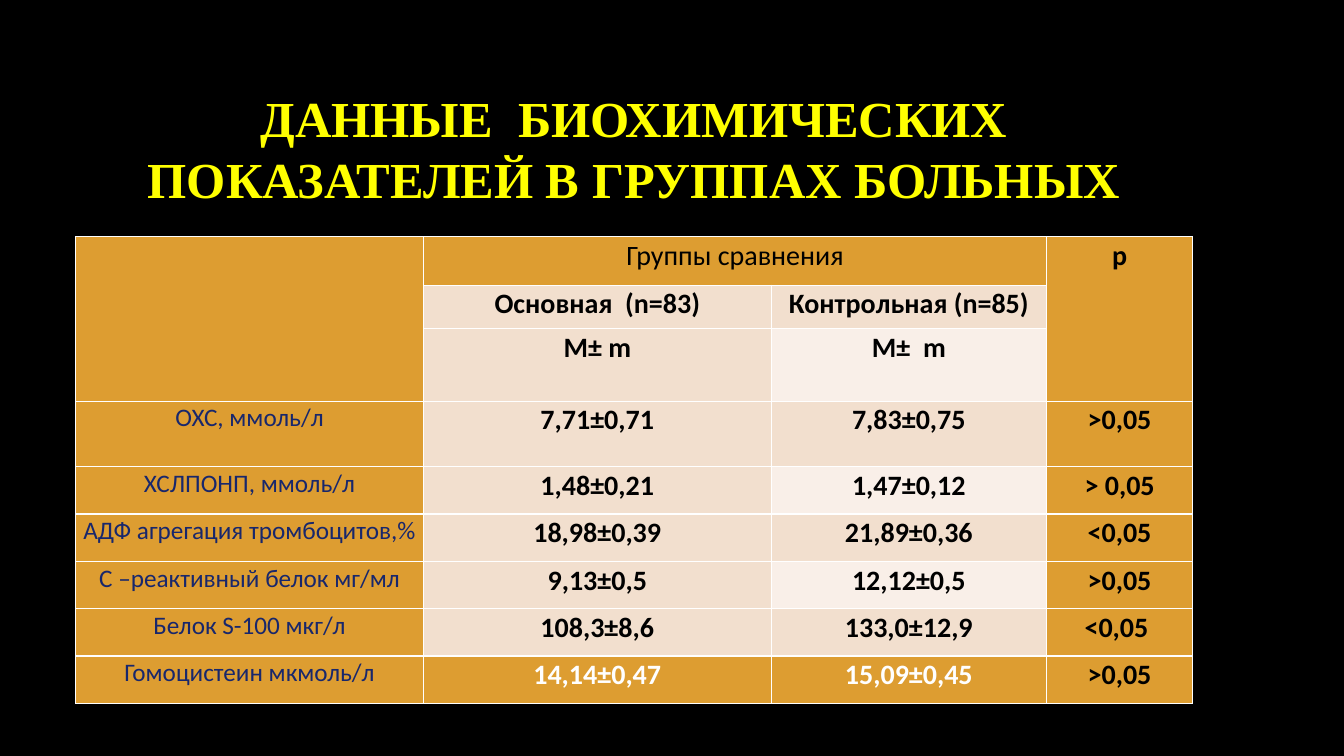
import dataclasses

import pptx
import pptx.dml.color
import pptx.enum.text
import pptx.oxml
import pptx.oxml.ns
import pptx.util
from pptx.util import Inches


@dataclasses.dataclass(frozen=True)
class Theme:
    back: str = "000000"
    title: str = "FFFF00"
    gold: str = "DD9D31"
    sand: str = "F2DFCE"
    cream: str = "F9EFE8"
    navy: str = "18276C"
    black: str = "000000"
    white: str = "FFFFFF"
    serif: str = "Times New Roman"
    sans: str = "Calibri"
    large: int = 36
    body: int = 20
    label: int = 18
    line: int = 1
    lead: float = 1.06


THEME = Theme()
LEFT, WIDTH = 0.75, 11.08
COLS = [3.45, 3.45, 2.73, 1.45]
ROWS = [0.48, 0.43, 0.72, 0.65] + [0.47] * 5
TITLE = "ДАННЫЕ  БИОХИМИЧЕСКИХ ПОКАЗАТЕЛЕЙ В ГРУППАХ БОЛЬНЫХ"
HEADS = 3
DATA = [
    ["", "Группы сравнения", "", "р"],
    ["", "Основная  (n=83)", "Контрольная (n=85)", ""],
    ["", "M± m", "M±  m", ""],
    ["ОХС, ммоль/л", "7,71±0,71", "7,83±0,75", ">0,05"],
    ["ХСЛПОНП, ммоль/л", "1,48±0,21", "1,47±0,12", "> 0,05"],
    ["АДФ агрегация тромбоцитов,%", "18,98±0,39", "21,89±0,36", "<0,05"],
    ["С –реактивный белок мг/мл", "9,13±0,5", "12,12±0,5", ">0,05"],
    ["Белок S-100 мкг/л", "108,3±8,6", "133,0±12,9", "<0,05 "],
    ["Гомоцистеин мкмоль/л", "14,14±0,47", "15,09±0,45", ">0,05"],
]


def rgb(code):
    return pptx.dml.color.RGBColor.from_string(code)


def style(par, face, size, color, bold):
    par.alignment = pptx.enum.text.PP_ALIGN.CENTER
    for run in par.runs:
        run.font.name = face
        run.font.size = pptx.util.Pt(size)
        run.font.color.rgb = rgb(color)
        run.font.bold = bold


def add_title(slide):
    box = slide.shapes.title
    box.left, box.top = Inches(LEFT), Inches(0.67)
    box.width, box.height = Inches(WIDTH), Inches(1.59)
    frame = box.text_frame
    frame.text = TITLE
    frame.word_wrap = True
    frame.vertical_anchor = pptx.enum.text.MSO_ANCHOR.MIDDLE
    style(frame.paragraphs[0], THEME.serif, THEME.large, THEME.title, True)


def add_edges(cell):
    props = cell._tc.get_or_add_tcPr()
    width = pptx.util.Pt(THEME.line)
    for place, side in enumerate("LRTB"):
        edge = pptx.oxml.parse_xml(
            f'<a:ln{side} {pptx.oxml.ns.nsdecls("a")} w="{width}">'
            f'<a:solidFill><a:srgbClr val="{THEME.white}"/></a:solidFill>'
            f"</a:ln{side}>"
        )
        props.insert(place, edge)


def pick_fill(row, col):
    if row in (0, len(DATA) - 1) or col in (0, 3):
        return THEME.gold
    if col == 2 and row % 2 == 0:
        return THEME.cream
    return THEME.sand


def pick_font(row, col):
    if col == 0:
        return THEME.label, THEME.navy, False
    last = row == len(DATA) - 1
    color = THEME.white if last and col < 3 else THEME.black
    return THEME.body, color, (row, col) != (0, 1)


def fill_cell(cell, row, col):
    cell.margin_left = cell.margin_right = Inches(0)
    cell.margin_top = cell.margin_bottom = Inches(0)
    cell.fill.solid()
    cell.fill.fore_color.rgb = rgb(pick_fill(row, col))
    add_edges(cell)
    if DATA[row][col]:
        cell.text_frame.text = DATA[row][col]
        par = cell.text_frame.paragraphs[0]
        par.line_spacing = THEME.lead
        style(par, THEME.sans, *pick_font(row, col))


def add_grid(slide):
    frame = slide.shapes.add_table(
        len(ROWS), len(COLS), Inches(LEFT), Inches(2.35),
        Inches(WIDTH), Inches(sum(ROWS)),
    )
    table = frame.table
    table.first_row = table.horz_banding = False
    for col, width in zip(table.columns, COLS):
        col.width = Inches(width)
    for row, height in zip(table.rows, ROWS):
        row.height = Inches(height)
    for row in range(len(ROWS)):
        for col in range(len(COLS)):
            fill_cell(table.cell(row, col), row, col)
    for col in (0, 3):
        table.cell(0, col).merge(table.cell(HEADS - 1, col))
    table.cell(0, 1).merge(table.cell(0, 2))


def main():
    deck = pptx.Presentation()
    deck.slide_width, deck.slide_height = Inches(13.33), Inches(7.5)
    slide = deck.slides.add_slide(deck.slide_layouts[5])
    slide.background.fill.solid()
    slide.background.fill.fore_color.rgb = rgb(THEME.back)
    add_title(slide)
    add_grid(slide)
    deck.save("out.pptx")


if __name__ == "__main__":
    main()
